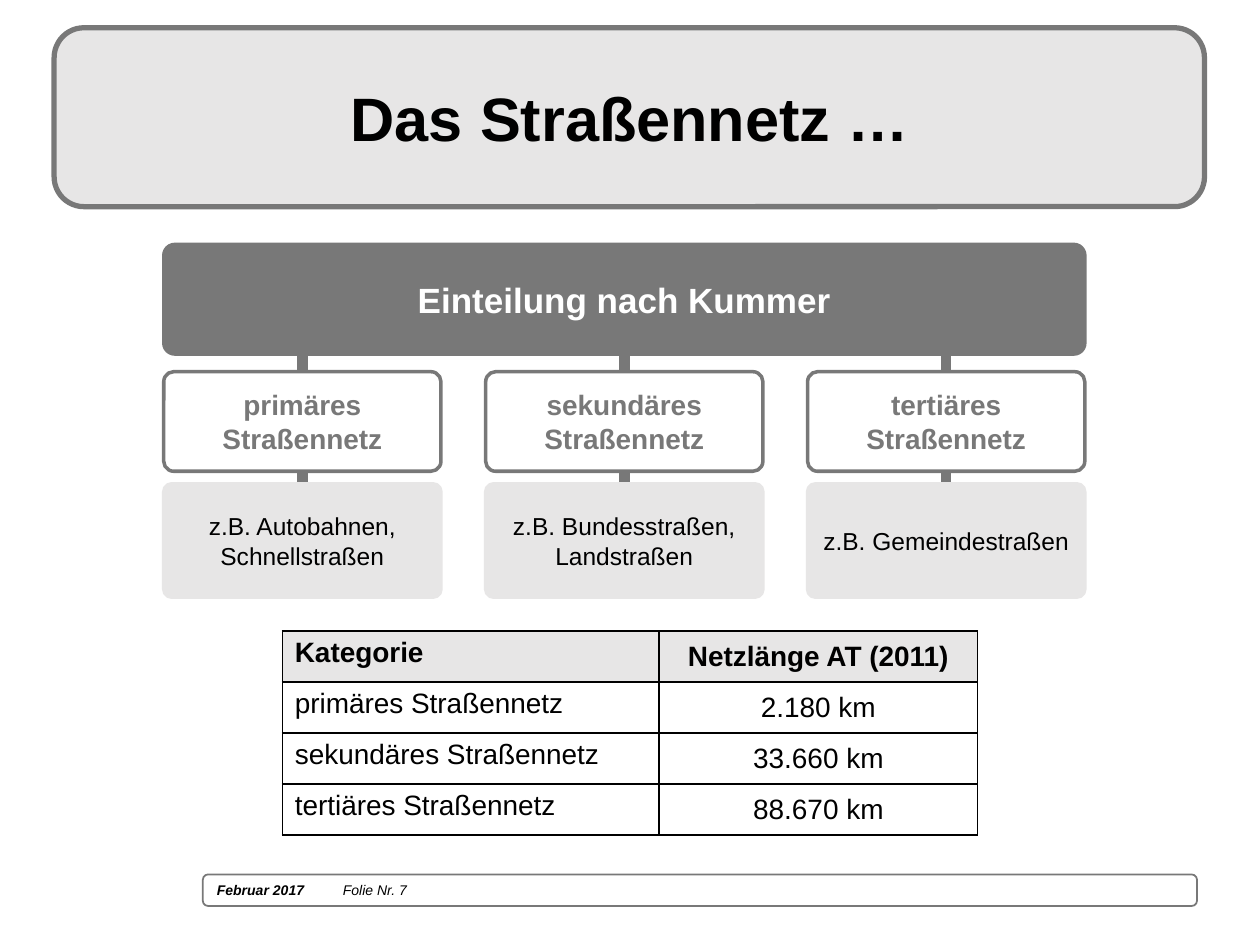
from lxml.etree import SubElement
from pptx import Presentation
from pptx.dml.color import RGBColor
from pptx.enum.shapes import MSO_CONNECTOR as Link, MSO_SHAPE as Shape
from pptx.enum.text import MSO_ANCHOR as Anchor, PP_ALIGN as Align
from pptx.oxml.ns import qn
from pptx.util import Inches, Pt

GREY, PALE, WHITE, BLACK = "787878", "E7E6E6", "FFFFFF", "000000"
COLOR = RGBColor.from_string


def write(frame, text, size, color=BLACK, bold=False, align=Align.CENTER, anchor=Anchor.MIDDLE):
    frame.word_wrap = True
    frame.vertical_anchor = anchor
    para = frame.paragraphs[0]
    para.alignment = align
    span = para.add_run()
    span.text = text
    for name, value in {"name": "Arial", "size": Pt(size), "bold": bold, "italic": False}.items():
        setattr(span.font, name, value)
    span.font.color.rgb = COLOR(color)
    return span


def add_box(left, top, width, height, fill, line, weight, corner=0.1667):
    box = page.shapes.add_shape(Shape.ROUNDED_RECTANGLE, *map(Inches, (left, top, width, height)))
    box.shadow.inherit = False
    box.adjustments[0] = corner
    box.fill.solid()
    box.fill.fore_color.rgb = COLOR(fill)
    box.line.color.rgb = COLOR(line)
    box.line.width = Pt(weight)
    box.text_frame.margin_left = box.text_frame.margin_right = Inches(0.05)
    return box


deck = Presentation()
deck.slide_width, deck.slide_height = Inches(10), Inches(7.5)
page = deck.slides.add_slide(deck.slide_layouts[5])

# Footer bar
footer = add_box(1.61, 6.94, 7.89, 0.25, WHITE, GREY, 1)
footer.text_frame.margin_left = Inches(0.1)
tabs = SubElement(footer.text_frame.paragraphs[0]._p.get_or_add_pPr(), qn("a:tabLst"))
SubElement(tabs, qn("a:tab"), pos=str(Inches(1)), algn="l")
for text, bold in (("Februar 2017\t", True), ("Folie Nr. 7", False)):
    write(footer.text_frame, text, 8, bold=bold, align=Align.LEFT).font.italic = True

# Title on its banner
banner = add_box(0.43, 0.22, 9.13, 1.42, PALE, GREY, 3)
title = page.shapes.title
title.left, title.top, title.width, title.height = map(Inches, (0.59, 0.3, 8.82, 1.25))
write(title.text_frame, "Das Straßennetz …", 35, bold=True)
banner.element.addnext(title.element)

# Hierarchy grid: three columns under one heading
LEFT, PITCH, WIDTH = 1.3, 2.555, 2.2
HEAD_TOP, HEAD_HEIGHT = 1.94, 0.87
KIND_TOP, KIND_HEIGHT = 2.95, 0.79
EXAMPLE_TOP, EXAMPLE_HEIGHT = 3.84, 0.9
columns = [
    ("primäres Straßennetz", "z.B. Autobahnen, Schnellstraßen"),
    ("sekundäres Straßennetz", "z.B. Bundesstraßen, Landstraßen"),
    ("tertiäres Straßennetz", "z.B. Gemeindestraßen"),
]

# Stems lie behind the boxes
stems = []
for column in range(len(columns)):
    center = Inches(LEFT + column * PITCH + WIDTH / 2)
    stem = page.shapes.add_connector(Link.STRAIGHT, center, Inches(HEAD_TOP + HEAD_HEIGHT),
                                     center, Inches(EXAMPLE_TOP + EXAMPLE_HEIGHT))
    stem.line.color.rgb = COLOR(GREY)
    stem.line.width = Pt(6)
    SubElement(stem.element.spPr, qn("a:effectLst"))
    stems.append(stem)

heading = add_box(LEFT, HEAD_TOP, 2 * PITCH + WIDTH, HEAD_HEIGHT, GREY, GREY, 2, 0.1)
write(heading.text_frame, "Einteilung nach Kummer", 20, WHITE, bold=True)
stems[1].begin_connect(heading, 2)

for column, (kind, example) in enumerate(columns):
    left = LEFT + column * PITCH
    example_box = add_box(left, EXAMPLE_TOP, WIDTH, EXAMPLE_HEIGHT, PALE, PALE, 2, 0.07)
    write(example_box.text_frame, example, 14)
    stems[column].end_connect(example_box, 2)
    kind_box = add_box(left, KIND_TOP, WIDTH, KIND_HEIGHT, WHITE, GREY, 2, 0.1)
    write(kind_box.text_frame, kind, 16, GREY, bold=True)

# Table of network lengths
rows = [("Kategorie", "Netzlänge AT (2011)")]
rows += zip((kind for kind, _ in columns), ("2.180 km", "33.660 km", "88.670 km"))
table = page.shapes.add_table(len(rows), 2, *map(Inches, (2.24, 5.01, 5.52, 1.62))).table
table.columns[0].width, table.columns[1].width = Inches(2.99), Inches(2.53)
for r, row in enumerate(rows):
    for c, text in enumerate(row):
        cell = table.cell(r, c)
        write(cell.text_frame, text, 16, bold=r == 0, align=(Align.LEFT, Align.CENTER)[c])
        cell.vertical_anchor = (Anchor.TOP, Anchor.MIDDLE)[c]
        properties = cell._tc.get_or_add_tcPr()
        for side in ("lnL", "lnR", "lnT", "lnB"):
            border = SubElement(properties, qn(f"a:{side}"), w=str(Pt(1)))
            SubElement(SubElement(border, qn("a:solidFill")), qn("a:srgbClr"), val=BLACK)
        cell.fill.solid()
        cell.fill.fore_color.rgb = COLOR(WHITE if r else PALE)

deck.save("out.pptx")
